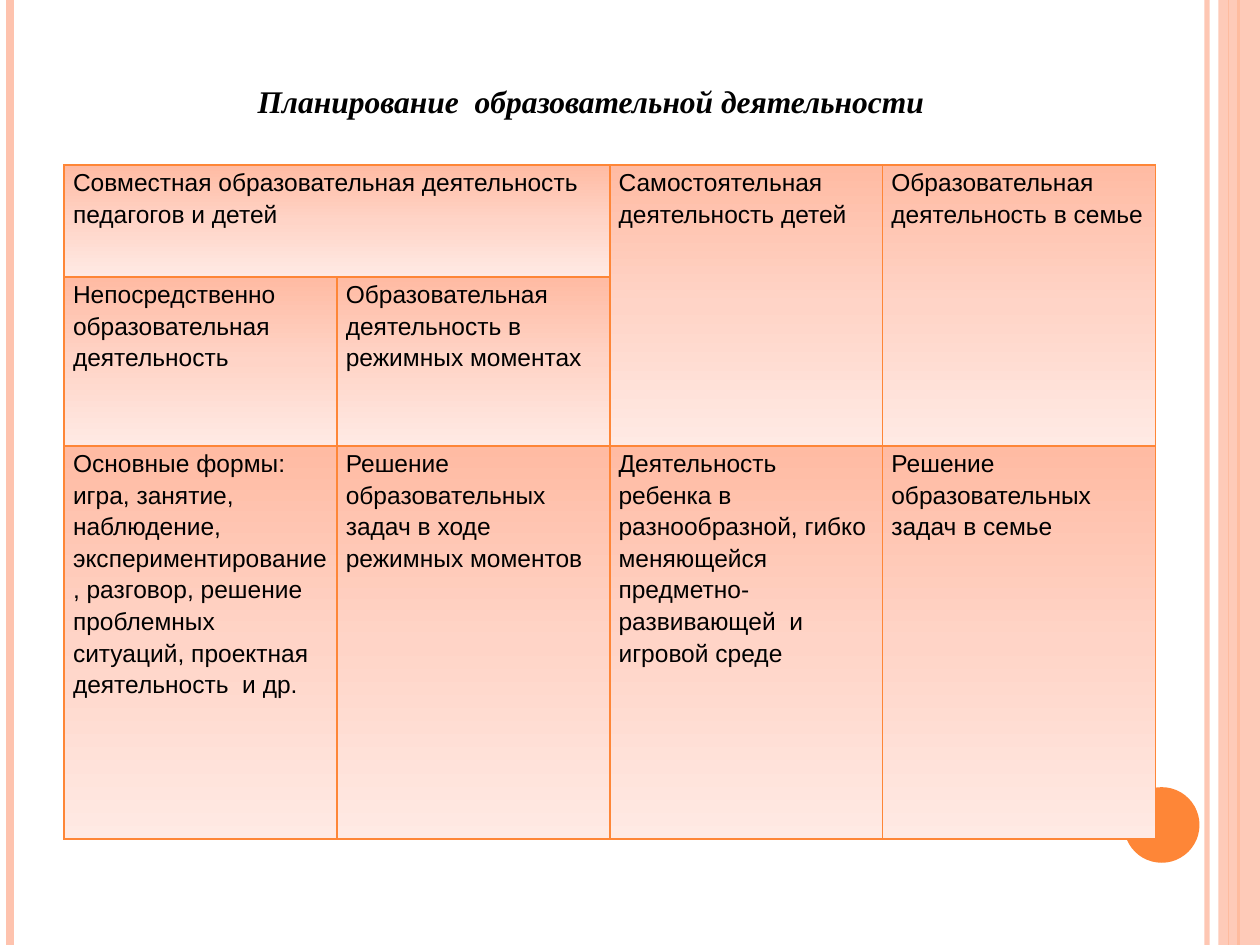
"""Build a slide with a table that plans educational activities."""
from lxml.etree import SubElement
from pptx import Presentation
from pptx.dml.color import RGBColor
from pptx.enum.shapes import MSO_CONNECTOR, MSO_SHAPE
from pptx.enum.text import MSO_ANCHOR, MSO_AUTO_SIZE, PP_ALIGN
from pptx.oxml.ns import qn
from pptx.util import Inches, Pt

THEME = {
    "accent": "FE8637", "pale": "FEC3AE", "ink": "000000",
    "fade": [(0, "FFBBA3"), (50, "FFD4C7"), (100, "FFEAE4")],
    "head": ("Times New Roman", 18), "body": ("Arial", 14),
}


def write(para, text, face, bold=False):
    run = para.add_run()
    run.text = text
    font = run.font
    font.name, font.size = face[0], Pt(face[1])
    font.bold = font.italic = bold
    font.color.rgb = RGBColor.from_string(THEME["ink"])


def tint(node, color, alpha=100):
    clr = SubElement(node, qn("a:srgbClr"), val=color)
    if alpha < 100:
        SubElement(clr, qn("a:alpha"), val=str(alpha * 1000))


deck = Presentation()
deck.slide_width, deck.slide_height = Inches(10), Inches(7.5)
wide, high = deck.slide_width, deck.slide_height
slide = deck.slides.add_slide(deck.slide_layouts[5])
shapes = slide.shapes

title = shapes.title
title.left, title.top = int(wide * 0.075), int(high * 0.08)
title.width, title.height = int(wide * 0.788), int(high * 0.053)
frame = title.text_frame
frame.word_wrap = True
frame.auto_size = MSO_AUTO_SIZE.NONE
frame.vertical_anchor = MSO_ANCHOR.MIDDLE
para = frame.paragraphs[0]
para.alignment = PP_ALIGN.CENTER
write(para, "Планирование  образовательной деятельности", THEME["head"], True)

rules = [(0.958, "pale", 3, 93), (0.008, "pale", 4.5, 100),
         (0.983, "accent", 1.5, 100), (0.975, "accent", 0.75, 100)]
for share, hue, weight, alpha in rules:
    x = int(wide * share)
    rule = shapes.add_connector(MSO_CONNECTOR.STRAIGHT, x, 0, x, high)
    rule.line.width = Pt(weight)
    tint(SubElement(rule.line._get_or_add_ln(), qn("a:solidFill")), THEME[hue], alpha)
    SubElement(rule._element.spPr, qn("a:effectLst"))

marks = [(MSO_SHAPE.RECTANGLE, (0.967, 0, 0.033, 1), "pale", 87),
         (MSO_SHAPE.OVAL, (0.892, 0.833, 0.06, 0.08), "accent", 100)]
for kind, (x, y, w, h), hue, alpha in marks:
    mark = shapes.add_shape(kind, int(wide * x), int(high * y), int(wide * w), int(high * h))
    mark.shadow.inherit = False
    mark.line.fill.background()
    mark.fill.solid()
    mark.fill.fore_color.rgb = RGBColor.from_string(THEME[hue])
    if alpha < 100:
        clr = mark._element.spPr.find(qn("a:solidFill"))[0]
        SubElement(clr, qn("a:alpha"), val=str(alpha * 1000))

rows = [
    ["Совместная образовательная деятельность педагогов и детей", "",
     "Самостоятельная деятельность детей", "Образовательная деятельность в семье"],
    ["Непосредственно образовательная деятельность",
     "Образовательная деятельность в режимных моментах", "", ""],
    ["Основные формы: игра, занятие, наблюдение, экспериментирование, разговор, "
     "решение проблемных ситуаций, проектная деятельность  и др.",
     "Решение образовательных задач в ходе режимных моментов",
     "Деятельность ребенка в разнообразной, гибко меняющейся "
     "предметно-развивающей  и игровой среде",
     "Решение образовательных задач в семье"],
]
span, tall = Inches(8.66), Inches(5.35)
table = shapes.add_table(3, 4, Inches(0.51), Inches(1.31), span, tall).table
table.first_row = table.horz_banding = False
for col in table.columns:
    col.width = span // 4
for row, size in zip(table.rows, (0.89, 1.34, 3.12)):
    row.height = Inches(size)
for start, end in [((0, 0), (0, 1)), ((0, 2), (1, 2)), ((0, 3), (1, 3))]:
    table.cell(*start).merge(table.cell(*end))

for i, row in enumerate(rows):
    for j, text in enumerate(row):
        cell = table.cell(i, j)
        cell.margin_left = cell.margin_right = Inches(0.07)
        cell.margin_top = cell.margin_bottom = 0
        if text:
            para = cell.text_frame.paragraphs[0]
            para.line_spacing = 1.15
            para.space_after = Pt(12 if i == 2 else 0)
            write(para, text, THEME["body"])
        props = cell._tc.get_or_add_tcPr()
        for side in ("lnL", "lnR", "lnT", "lnB"):
            edge = SubElement(props, qn("a:" + side), w=str(Pt(1)))
            tint(SubElement(edge, qn("a:solidFill")), THEME["accent"])
        grad = SubElement(props, qn("a:gradFill"), rotWithShape="1")
        stops = SubElement(grad, qn("a:gsLst"))
        for pos, color in THEME["fade"]:
            tint(SubElement(stops, qn("a:gs"), pos=str(pos * 1000)), color)
        SubElement(grad, qn("a:lin"), ang=str(90 * 60000), scaled="0")

deck.save("out.pptx")
